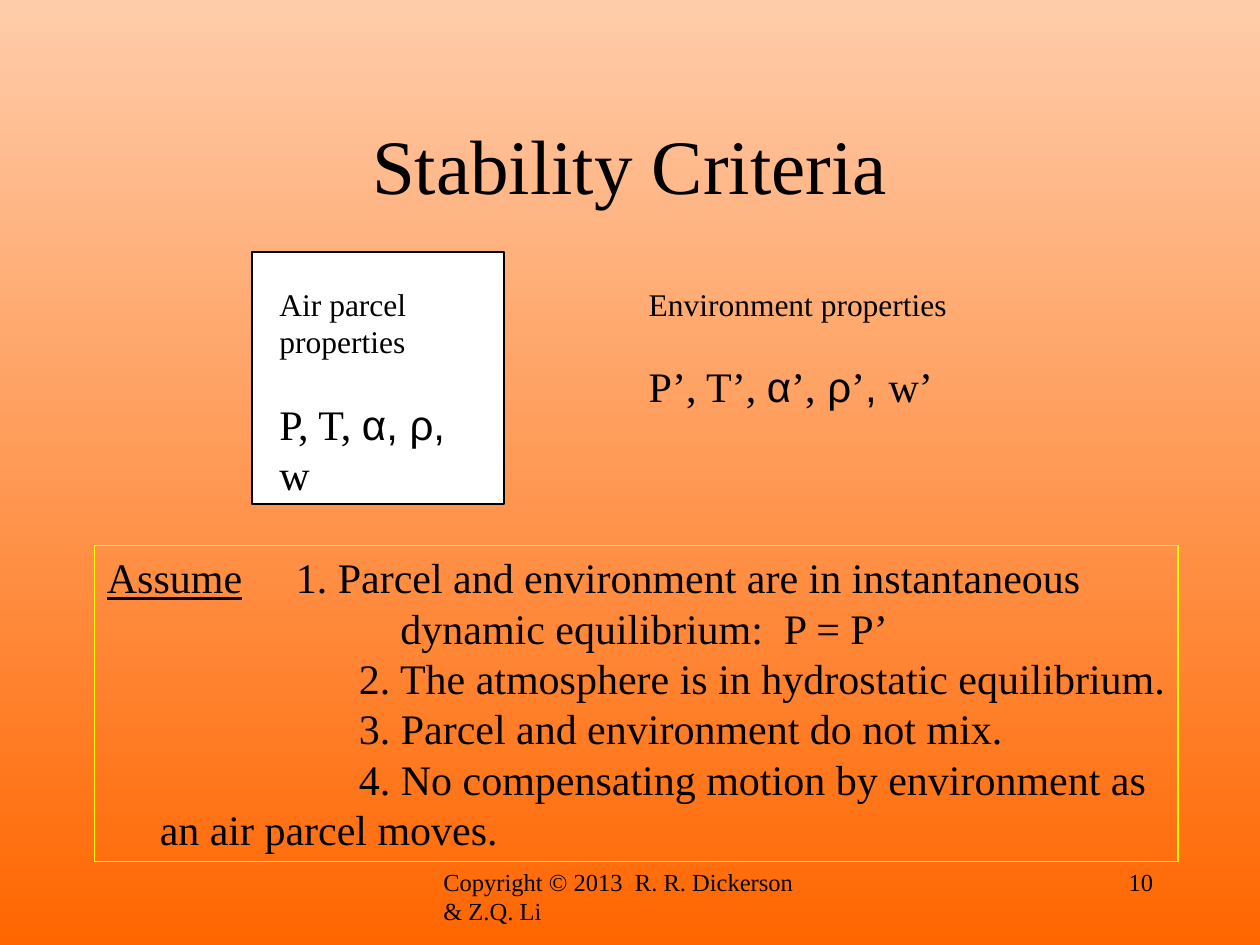
from pptx import Presentation, util as u
from pptx.dml import color
from pptx.enum import shapes, text

SERIF, SANS = "Times New Roman", "Arial"
BLACK, WHITE, YELLOW = "000000", "FFFFFF", "FFFF00"
PARCEL_OUTLINE = [
    (2.56, 2.12), (2.49, 2.16), (2.42, 2.17), (1.8, 2.58), (1.58, 3.33), (2.23, 4),
    (3.19, 4.25), (3.94, 3.92), (4.26, 3.17), (3.94, 2.42), (3.08, 2.08),
]


def rgb(value):
    """Turn a hex string into a colour."""
    return color.RGBColor.from_string(value)


def add_run(paragraph, words, size, font=SERIF, underline=False):
    """Append one formatted run."""
    run = paragraph.add_run()
    run.text = words
    run.font.size = u.Pt(size)
    run.font.name = font
    run.font.underline = underline
    run.font.color.rgb = rgb(BLACK)


def add_box(slide, box):
    """Add a wrapping text box and return its frame."""
    frame = slide.shapes.add_textbox(*map(u.Inches, box)).text_frame
    frame.word_wrap = True
    return frame


def add_label(slide, box, words, size, align=text.PP_ALIGN.LEFT, anchor=text.MSO_ANCHOR.TOP):
    """Place a single line of text in its box."""
    frame = add_box(slide, box)
    frame.vertical_anchor = anchor
    paragraph = frame.paragraphs[0]
    paragraph.alignment = align
    add_run(paragraph, words, size)


def add_properties(slide, box, headings, symbols):
    """Place heading lines above a line of symbols."""
    frame = add_box(slide, box)
    frame.margin_right = u.Inches(0.2)
    for index, heading in enumerate(headings):
        paragraph = frame.paragraphs[0] if index == 0 else frame.add_paragraph()
        add_run(paragraph, heading, 18)
    paragraph = frame.add_paragraph()
    paragraph.space_before = u.Pt(21.6)
    for words, font in symbols:
        add_run(paragraph, words, 24, font)


def add_parcel(slide, outline):
    """Draw the air parcel through its corner points."""
    start, *corners = outline
    builder = slide.shapes.build_freeform(*start, scale=u.Inches(1))
    builder.add_line_segments(corners, close=True)
    shape = builder.convert_to_shape()
    shape.shadow.inherit = False
    shape.fill.solid()
    shape.fill.fore_color.rgb = rgb(WHITE)
    shape.line.color.rgb = rgb(BLACK)
    shape.line.width = u.Pt(0.75)


def add_assumptions(slide, box, heading, items):
    """List the assumptions, each with its left margin and first-line indent."""
    shape = slide.shapes.add_shape(shapes.MSO_SHAPE.RECTANGLE, *map(u.Inches, box))
    shape.shadow.inherit = False
    shape.fill.background()
    shape.line.color.rgb = rgb(YELLOW)
    shape.line.width = u.Pt(0.75)
    frame = shape.text_frame
    frame.word_wrap = True
    frame.margin_right = u.Inches(0.05)
    frame.vertical_anchor = text.MSO_ANCHOR.TOP
    for index, (words, margin, indent) in enumerate(items):
        paragraph = frame.paragraphs[0] if index == 0 else frame.add_paragraph()
        paragraph.alignment = text.PP_ALIGN.LEFT
        properties = paragraph._p.get_or_add_pPr()
        properties.set("marL", str(u.Inches(margin)))
        properties.set("indent", str(u.Inches(indent)))
        if index == 0:
            add_run(paragraph, heading, 24, underline=True)
        add_run(paragraph, words, 24)


def add_background(slide, top, bottom):
    """Fill the slide with a vertical gradient."""
    fill = slide.background.fill
    fill.gradient()
    fill.gradient_angle = 270
    for stop, value, position in zip(fill.gradient_stops, (top, bottom), (0, 1)):
        stop.color.rgb = rgb(value)
        stop.position = position


def main():
    """Build and save the slide."""
    presentation = Presentation()
    presentation.slide_width, presentation.slide_height = u.Inches(10), u.Inches(7.5)
    slide = presentation.slides.add_slide(presentation.slide_layouts[6])
    add_background(slide, "FFCCAA", "FF6600")
    add_label(slide, (3.42, 6.83, 3.17, 0.5), "Copyright © 2013  R. R. Dickerson & Z.Q. Li", 14)
    add_label(slide, (7.17, 6.83, 2.08, 0.5), "10", 14, text.PP_ALIGN.RIGHT)
    add_label(slide, (0.75, 0.67, 8.5, 1.25), "Stability Criteria", 44,
              text.PP_ALIGN.CENTER, text.MSO_ANCHOR.MIDDLE)
    add_parcel(slide, PARCEL_OUTLINE)
    add_properties(slide, (2.12, 2.21, 1.84, 1.41), ["Air parcel", "properties"],
                   [("P, T, ", SERIF), ("α, ρ, ", SANS), ("w", SERIF)])
    add_properties(slide, (5.05, 2.21, 2.79, 1.8), ["Environment properties"],
                   [("P’, T’, ", SERIF), ("α", SANS), ("’,", SERIF), (" ρ", SANS),
                    ("’", SERIF), (", ", SANS), ("w’", SERIF)])
    add_assumptions(slide, (0.75, 4.33, 8.6, 2.51), "Assume", [
        (" \t1. Parcel and environment are in instantaneous", 0, 0),
        ("dynamic equilibrium:  P = P’", 2.33, 0),
        ("2. The atmosphere is in hydrostatic equilibrium.", 2, 0),
        ("3. Parcel and environment do not mix.", 2, 0),
        ("4. No compensating motion by environment as an air parcel moves.", 0.42, 1.58),
    ])
    presentation.save("out.pptx")


if __name__ == "__main__":
    main()
